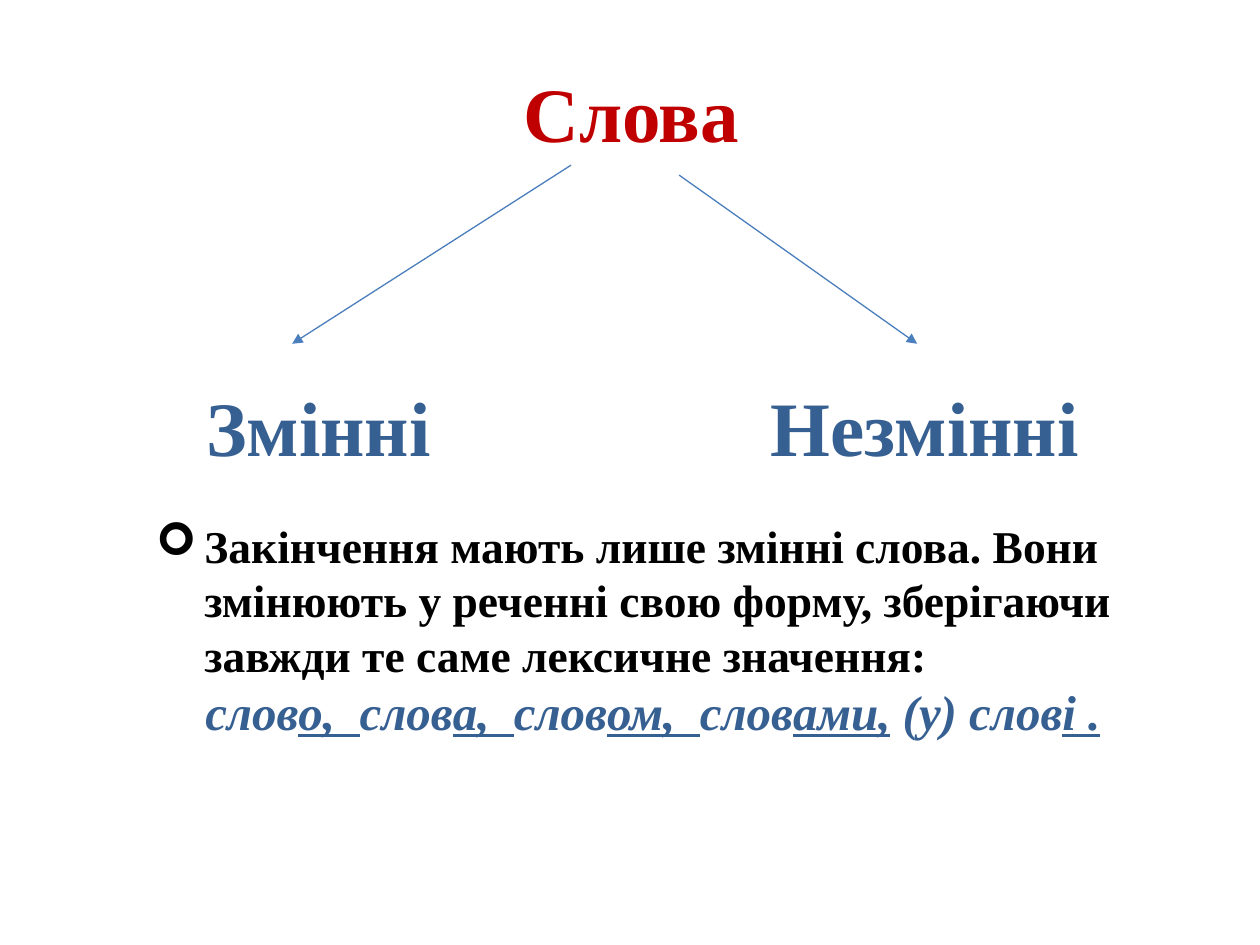
from lxml import etree
from pptx import Presentation
from pptx.dml.color import RGBColor
from pptx.enum.shapes import MSO_CONNECTOR
from pptx.enum.text import MSO_ANCHOR, MSO_AUTO_SIZE, PP_ALIGN
from pptx.oxml.ns import qn
from pptx.util import Cm, Pt

STRAIGHT = MSO_CONNECTOR.STRAIGHT
TOP = MSO_ANCHOR.TOP
GROW = MSO_AUTO_SIZE.SHAPE_TO_FIT_TEXT
CENTER = PP_ALIGN.CENTER

RED = RGBColor(0xC0, 0x00, 0x00)
BLUE = RGBColor(0x37, 0x60, 0x92)
ARROW_BLUE = RGBColor(0x4B, 0x7E, 0xBC)
BLACK = RGBColor(0x00, 0x00, 0x00)


def add_run(paragraph, text, size, color):
    run = paragraph.add_run()
    run.text = text
    run.font.name = "Times New Roman"
    run.font.size = Pt(size)
    run.font.bold = True
    run.font.color.rgb = color
    return run


prs = Presentation()
prs.slide_width = Cm(25.4)
prs.slide_height = Cm(19.05)
slide = prs.slides.add_slide(prs.slide_layouts[6])
shapes = slide.shapes

# Heading
heading = shapes.add_textbox(Cm(1.3), Cm(1.32), Cm(22.86), Cm(3.18)).text_frame
heading.word_wrap = True
heading.vertical_anchor = TOP
heading.margin_top = Cm(0)
heading.paragraphs[0].alignment = CENTER
add_run(heading.paragraphs[0], "Слова", 44, RED)

# Arrows from the heading to the two groups
for x1, y1, x2, y2 in [(11.51, 3.33, 5.89, 6.93), (13.69, 3.53, 18.49, 6.93)]:
    arrow = shapes.add_connector(STRAIGHT, Cm(x1), Cm(y1), Cm(x2), Cm(y2))
    arrow.line.color.rgb = ARROW_BLUE
    arrow.line.width = Pt(0.75)
    etree.SubElement(arrow.line._get_or_add_ln(), qn("a:tailEnd"), type="triangle")
    etree.SubElement(arrow._element.spPr, qn("a:effectLst"))

# Groups of words
for group, left, width in [("Змінні", 3.91, 5.49), ("Незмінні", 15.29, 7.16)]:
    label = shapes.add_textbox(Cm(left), Cm(7.52), Cm(width), Cm(2.13)).text_frame
    label.word_wrap = False
    label.auto_size = GROW
    add_run(label.paragraphs[0], group, 44, BLUE)

# Rule with examples
rule_frame = shapes.add_textbox(Cm(2.9), Cm(10.31), Cm(20.6), Cm(4.78)).text_frame
rule_frame.word_wrap = True
rule_frame.auto_size = GROW

rule = rule_frame.paragraphs[0]
rule_props = rule._p.get_or_add_pPr()
rule_props.set("marL", str(Cm(0.97)))
rule_props.set("indent", str(-Cm(0.97)))
etree.SubElement(rule_props, qn("a:buFont"), typeface="Wingdings")
etree.SubElement(rule_props, qn("a:buChar"), char="➢")
add_run(
    rule,
    "Закінчення мають лише змінні слова. Вони змінюють у реченні свою форму, "
    "зберігаючи завжди те саме лексичне значення:",
    26,
    BLACK,
)

examples = rule_frame.add_paragraph()
examples._p.get_or_add_pPr().set("marL", str(Cm(0.99)))
for stem, ending in [
    ("слов", "о,  "),
    ("слов", "а,  "),
    ("слов", "ом,  "),
    ("слов", "ами,"),
    (" (у) слов", "і ."),
]:
    for part, underlined in [(stem, False), (ending, True)]:
        run = add_run(examples, part, 28, BLUE)
        run.font.italic = True
        run.font.underline = underlined

prs.save("out.pptx")
